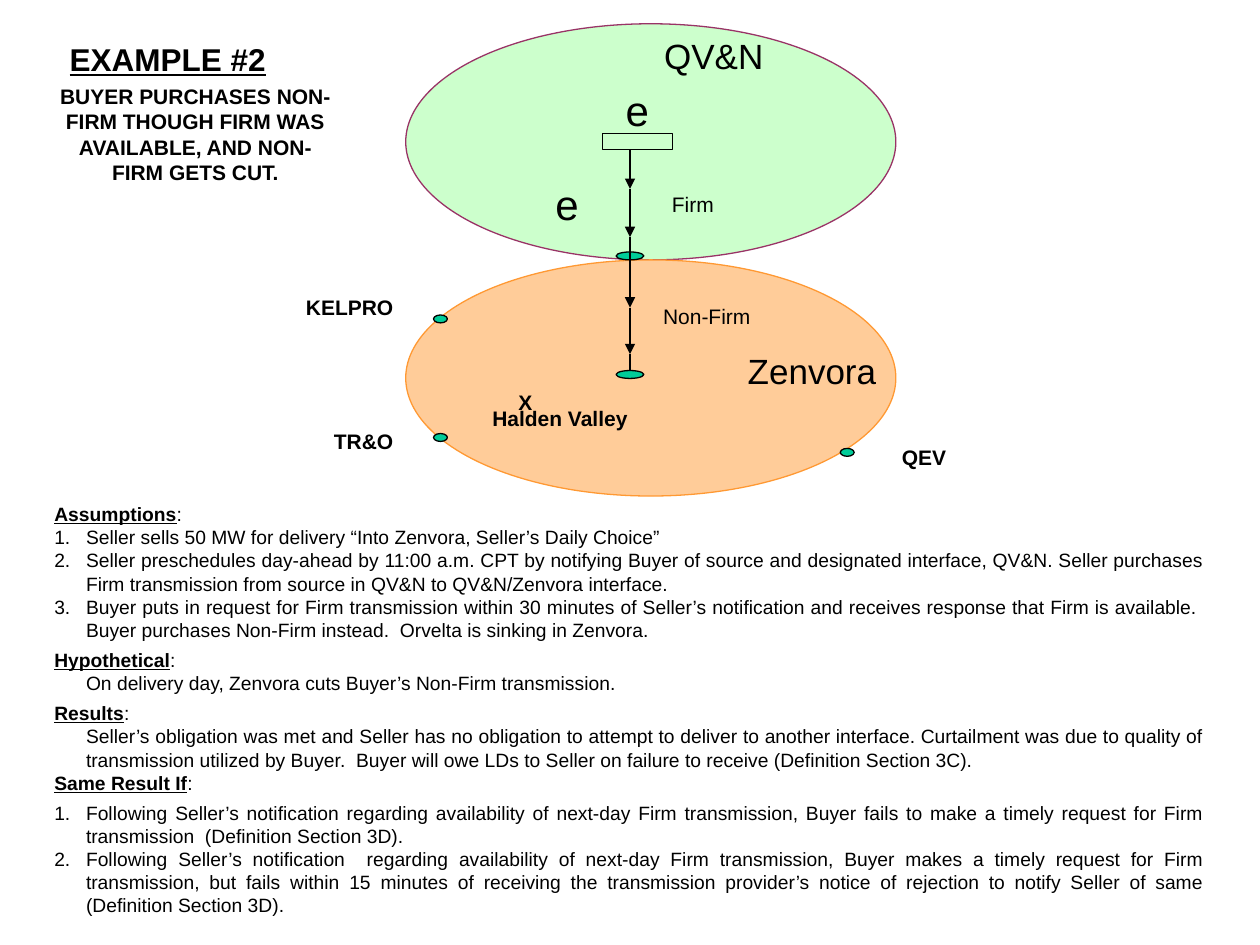
from dataclasses import dataclass
from itertools import pairwise
from typing import Optional

from lxml import etree
from pptx import Presentation
from pptx.dml.color import RGBColor
from pptx.enum.shapes import MSO_CONNECTOR, MSO_SHAPE
from pptx.enum.text import MSO_ANCHOR, MSO_AUTO_SIZE, PP_ALIGN
from pptx.oxml.ns import qn
from pptx.util import Cm, Pt

OVAL = MSO_SHAPE.OVAL
NODE = MSO_SHAPE.FLOWCHART_CONNECTOR
RECTANGLE = MSO_SHAPE.RECTANGLE
STRAIGHT = MSO_CONNECTOR.STRAIGHT
MIDDLE = MSO_ANCHOR.MIDDLE
NO_AUTOFIT = MSO_AUTO_SIZE.NONE
CENTER, JUSTIFY = PP_ALIGN.CENTER, PP_ALIGN.JUSTIFY

FONT = "Arial"
COLORS = {
    "ink": "000000",
    "source area": "CCFFCC",
    "source edge": "993366",
    "sink area": "FFCC99",
    "sink edge": "FF9933",
    "node": "00CC99",
}
HANGING = Cm(0.64)
PATH_X = 12.7


@dataclass
class Outline:
    """A preset shape, measured in centimetres."""
    kind: int
    left: float
    top: float
    width: float
    height: float
    fill: Optional[str] = None
    edge: str = "ink"


@dataclass
class Label:
    """A centred label, measured in centimetres."""
    text: str
    left: float
    top: float
    width: float = 2.26
    height: float = 0.64
    size: int = 12
    bold: bool = False


@dataclass
class Entry:
    """A paragraph of the body: a heading, or hanging text."""
    text: str
    heading: bool = False
    before: float = 0
    after: float = 0


AREAS = [
    Outline(OVAL, 8.18, 0.48, 9.88, 4.76, "source area", "source edge"),
    Outline(OVAL, 8.18, 5.24, 9.88, 4.76, "sink area", "sink edge"),
]
SOURCE = Outline(RECTANGLE, 12.14, 2.69, 1.42, 0.32)
INTERFACES = [Outline(NODE, left, top, 0.28, 0.16, "node")
              for left, top in ((8.74, 6.35), (16.94, 9.04), (8.74, 8.74))]
PATH_NODES = [Outline(NODE, PATH_X - 0.28, top, 0.56, 0.16, "node")
              for top in (5.08, 7.47)]
PATH_STOPS = [3.02, 3.81, 4.78, 6.2, 7.14, 7.47]

LABELS = [
    Label("QV&N", 13.26, 0.79, size=20),
    Label("e", 12.14, 2.06, 1.42, 0.3, size=24),
    Label("e", 10.72, 3.96, 1.42, 0.3, size=24),
    Label("Firm", 13.26, 3.96, 1.42, 0.3),
    Label("Non-Firm", 13.54, 6.2, 1.42, 0.33),
    Label("Zenvora", 15.24, 7.14, size=20),
    Label("QEV", 17.5, 8.89, bold=True),
    Label("Halden Valley", 10.16, 8.26, height=0.33, bold=True),
    Label("KELPRO", 5.92, 5.87, bold=True),
    Label("X", 9.88, 7.95, 1.42, 0.3, bold=True),
    Label("TR&O", 6.2, 8.58, bold=True),
]

ENTRIES = [
    Entry("Assumptions", heading=True),
    Entry("1.\tSeller sells 50 MW for delivery “Into Zenvora, Seller’s Daily Choice”"),
    Entry("2.\tSeller preschedules day-ahead by 11:00 a.m. CPT by notifying Buyer of "
          "source and designated interface, QV&N. Seller purchases Firm transmission "
          "from source in QV&N to QV&N/Zenvora interface."),
    Entry("3.\tBuyer puts in request for Firm transmission within 30 minutes of "
          "Seller’s notification and receives response that Firm is available.  "
          "Buyer purchases Non-Firm instead.  Orvelta is sinking in Zenvora."),
    Entry("Hypothetical", heading=True, before=4.1),
    Entry("\tOn delivery day, Zenvora cuts Buyer’s Non-Firm transmission."),
    Entry("Results", heading=True, before=4.1),
    Entry("\tSeller’s obligation was met and Seller has no obligation to attempt to "
          "deliver to another interface. Curtailment was due to quality of "
          "transmission utilized by Buyer.  Buyer will owe LDs to Seller on failure "
          "to receive (Definition Section 3C)."),
    Entry("Same Result If", heading=True, after=4.1),
    Entry("1.\tFollowing Seller’s notification regarding availability of next-day "
          "Firm transmission, Buyer fails to make a timely request for Firm "
          "transmission  (Definition Section 3D)."),
    Entry("2.\tFollowing Seller’s notification  regarding availability of next-day "
          "Firm transmission, Buyer makes a timely request for Firm transmission, but "
          "fails within 15 minutes of receiving the transmission provider’s notice of "
          "rejection to notify Seller of same (Definition Section 3D)."),
]


def color(name: str) -> RGBColor:
    return RGBColor.from_string(COLORS[name])


def write(para, text: str, *, size: float, bold: bool = False,
          underline: bool = False, align=CENTER) -> None:
    para.alignment = align
    span = para.add_run()
    span.text = text
    font = span.font
    font.name, font.size = FONT, Pt(size)
    font.bold, font.underline = bold, underline
    font.color.rgb = color("ink")


def set_frame(box, *, wrap: bool):
    frame = box.text_frame
    frame.auto_size = NO_AUTOFIT
    frame.word_wrap = wrap
    frame.vertical_anchor = MIDDLE
    return frame


def place(box, left: float, top: float, width: float, height: float) -> None:
    box.left, box.top = Cm(left), Cm(top)
    box.width, box.height = Cm(width), Cm(height)


def draw_outline(page, item: Outline) -> None:
    shape = page.shapes.add_shape(item.kind, Cm(item.left), Cm(item.top),
                                  Cm(item.width), Cm(item.height))
    shape.shadow.inherit = False
    if item.fill:
        shape.fill.solid()
        shape.fill.fore_color.rgb = color(item.fill)
    else:
        shape.fill.background()
    shape.line.color.rgb = color(item.edge)
    shape.line.width = Pt(0.75)


def draw_label(page, item: Label, wrap: bool = False) -> None:
    box = page.shapes.add_textbox(Cm(item.left), Cm(item.top),
                                  Cm(item.width), Cm(item.height))
    frame = set_frame(box, wrap=wrap)
    write(frame.paragraphs[0], item.text, size=item.size, bold=item.bold)


def draw_step(page, start: float, end: float, arrow: bool) -> None:
    step = page.shapes.add_connector(STRAIGHT, Cm(PATH_X), Cm(start),
                                     Cm(PATH_X), Cm(end))
    step.line.color.rgb = color("ink")
    step.line.width = Pt(0.75)
    if arrow:
        etree.SubElement(step.line._get_or_add_ln(), qn("a:tailEnd"), type="triangle")
    etree.SubElement(step._element.spPr, qn("a:effectLst"))


def fill_body(body) -> None:
    frame = set_frame(body, wrap=True)
    for index, entry in enumerate(ENTRIES):
        para = frame.add_paragraph() if index else frame.paragraphs[0]
        properties = para._p.get_or_add_pPr()
        properties.set("marL", str(HANGING))
        properties.set("indent", str(-HANGING))
        etree.SubElement(properties, qn("a:buNone"))
        para.space_before, para.space_after = Pt(entry.before), Pt(entry.after)
        write(para, entry.text, size=11, bold=entry.heading,
              underline=entry.heading, align=JUSTIFY)
        if entry.heading:
            write(para, ":", size=11, align=JUSTIFY)


def main() -> None:
    deck = Presentation()
    deck.slide_width, deck.slide_height = Cm(25.4), Cm(19.05)
    page = deck.slides.add_slide(deck.slide_layouts[1])

    # Title and body
    title, body = page.placeholders
    place(title, 1.12, 0.79, 4.52, 0.79)
    write(set_frame(title, wrap=False).paragraphs[0], "EXAMPLE #2",
          size=18, bold=True, underline=True)
    place(body, 0.84, 10.01, 23.7, 8.59)
    fill_body(body)
    draw_label(page, Label("BUYER PURCHASES NON-FIRM THOUGH FIRM WAS AVAILABLE, "
                           "AND NON-FIRM GETS CUT.", 0.84, 1.91, 6.2, 1.59,
                           bold=True), wrap=True)

    # Control areas, source and interfaces
    for item in [*AREAS, SOURCE, *INTERFACES, *PATH_NODES]:
        draw_outline(page, item)

    # Transmission path: the last step has no arrowhead
    for start, end in pairwise(PATH_STOPS):
        draw_step(page, start, end, arrow=end != PATH_STOPS[-1])

    # Labels
    for item in LABELS:
        draw_label(page, item)

    deck.save("out.pptx")


if __name__ == "__main__":
    main()
